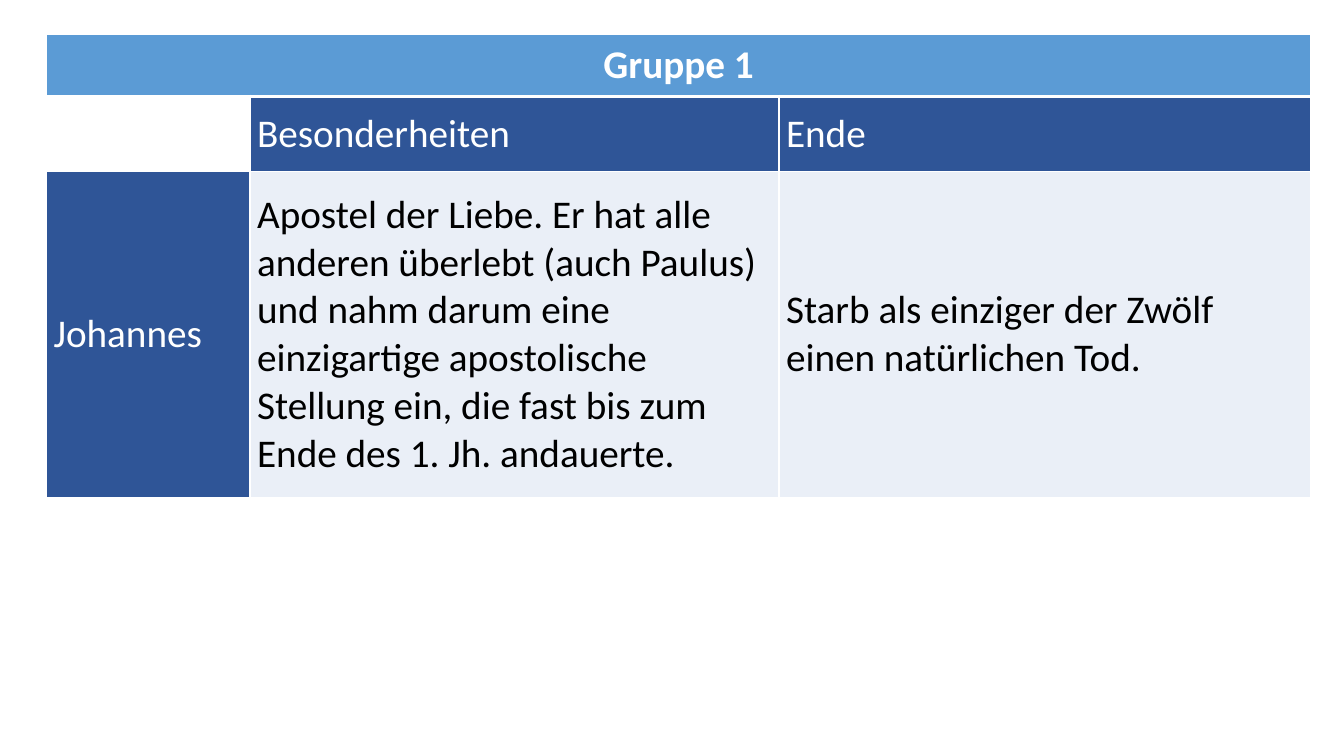
import pptx
import pptx.dml.color
import pptx.enum.text
import pptx.oxml
import pptx.oxml.ns
import pptx.util
from pptx.util import Cm

COLORS = {
    "white": "FFFFFF",
    "black": "000000",
    "group": "5B9BD5",
    "heading": "2F5597",
    "body": "EAEFF7",
}
COLUMN_WIDTHS = [5.13, 13.33, 13.4]
ROW_HEIGHTS = [1.57, 1.9, 8.2]
ROWS = [
    ["Gruppe 1", "", ""],
    ["", "Besonderheiten", "Ende"],
    [
        "Johannes",
        "Apostel der Liebe. Er hat alle anderen überlebt (auch Paulus) und nahm darum "
        "eine einzigartige apostolische Stellung ein, die fast bis zum Ende des 1. Jh. andauerte.",
        "Starb als einziger der Zwölf einen natürlichen Tod.",
    ],
]
ALIGN = pptx.enum.text.PP_ALIGN


def write_text(cell, text, color="white", bold=False, align=ALIGN.LEFT):
    para = cell.text_frame.paragraphs[0]
    para.alignment = align
    span = para.add_run()
    span.text = text
    span.font.name = "Calibri"
    span.font.size = pptx.util.Pt(28)
    span.font.bold = bold
    span.font.color.rgb = pptx.dml.color.RGBColor.from_string(COLORS[color])


def add_borders(cell, widths):
    properties = cell._tc.get_or_add_tcPr()
    for position, (side, width) in enumerate(widths.items()):
        line = pptx.oxml.parse_xml(
            f'<a:ln{side} {pptx.oxml.ns.nsdecls("a")} w="{pptx.util.Pt(width)}">'
            f'<a:solidFill><a:srgbClr val="{COLORS["white"]}"/></a:solidFill></a:ln{side}>'
        )
        properties.insert(position, line)


deck = pptx.Presentation()
deck.slide_width = Cm(33.87)
deck.slide_height = Cm(19.05)
page = deck.slides.add_slide(deck.slide_layouts[6])

frame = page.shapes.add_table(
    len(ROW_HEIGHTS), len(COLUMN_WIDTHS),
    Cm(1.17), Cm(0.86), Cm(sum(COLUMN_WIDTHS)), Cm(sum(ROW_HEIGHTS)),
)
table = frame.table
for column, width in zip(table.columns, COLUMN_WIDTHS):
    column.width = Cm(width)
for row, height in zip(table.rows, ROW_HEIGHTS):
    row.height = Cm(height)
table.cell(0, 0).merge(table.cell(0, 2))

for row_index, texts in enumerate(ROWS):
    for column_index, text in enumerate(texts):
        cell = table.cell(row_index, column_index)
        cell.vertical_anchor = pptx.enum.text.MSO_ANCHOR.MIDDLE
        cell.margin_left = cell.margin_right = Cm(0.18)
        cell.margin_top = cell.margin_bottom = 0

        is_group = row_index == 0
        is_body = row_index == 2 and column_index > 0
        if is_group:
            fill = "group"
        elif is_body:
            fill = "body"
        else:
            fill = "heading" if text else "white"
        cell.fill.solid()
        cell.fill.fore_color.rgb = pptx.dml.color.RGBColor.from_string(COLORS[fill])
        add_borders(cell, {
            "L": 1,
            "R": 1,
            "T": 3 if row_index == 1 else 1,
            "B": 3 if is_group else 1,
        })
        if text:
            write_text(
                cell, text,
                color="black" if is_body else "white",
                bold=is_group,
                align=ALIGN.CENTER if is_group else ALIGN.LEFT,
            )

deck.save("out.pptx")
